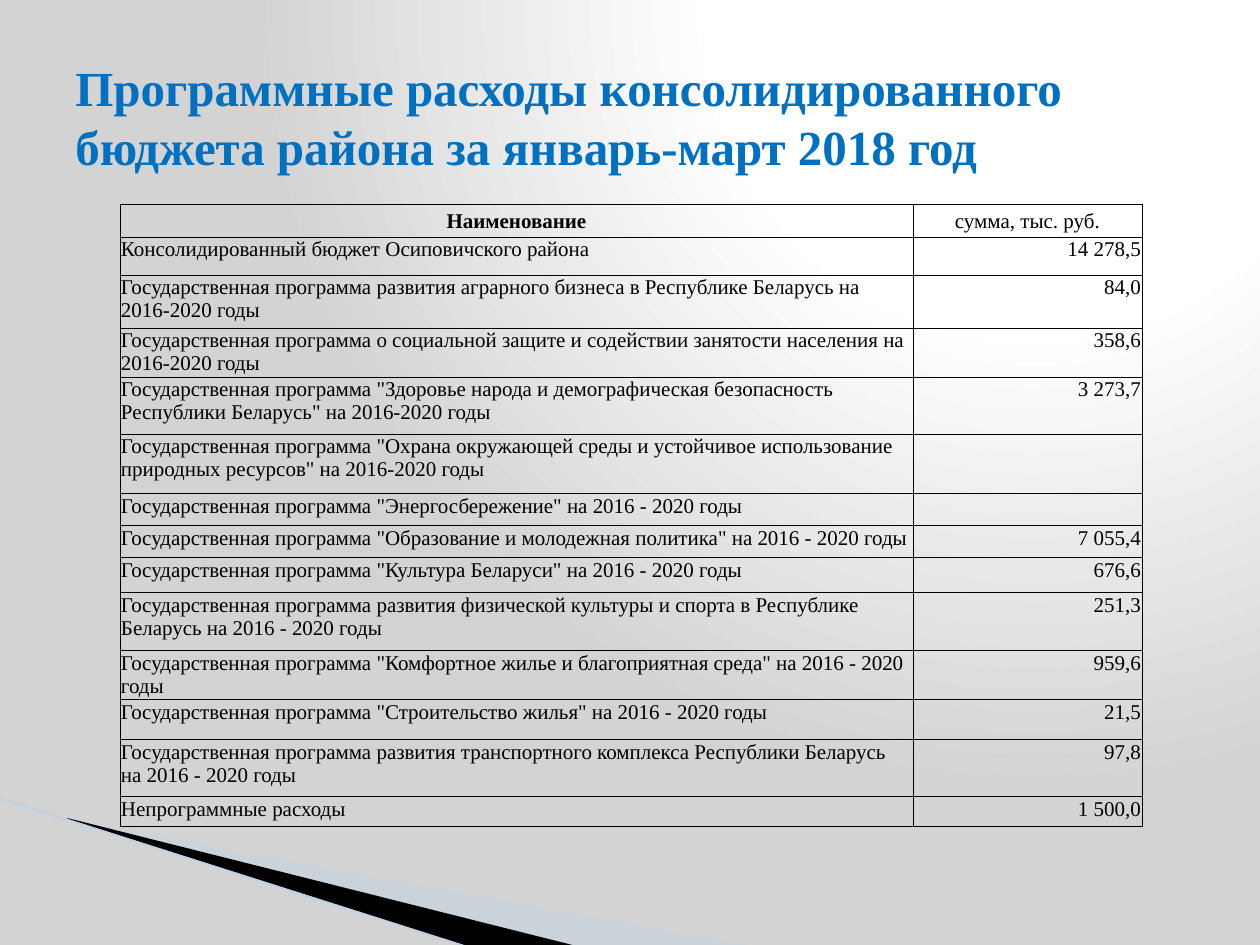
from dataclasses import dataclass

from lxml.etree import SubElement
from pptx import Presentation
from pptx.dml.color import RGBColor
from pptx.enum.shapes import MSO_CONNECTOR
from pptx.enum.text import MSO_ANCHOR, PP_ALIGN
from pptx.oxml import parse_xml
from pptx.oxml.ns import nsdecls, qn
from pptx.util import Emu, Pt


@dataclass(frozen=True)
class Theme:
    font: str = "Times New Roman"
    title_size: int = 28
    table_size: int = 12
    title: str = "0070C0"
    ink: str = "000000"
    pale: str = "C0D3E6"
    pale_alpha: int = 40
    line: str = "BBD0E3"
    line_width: float = 0.95
    border_width: float = 0.5
    backdrop: tuple = ((0, "FFFFFF"), (40, "FFFFFF"), (100, "D3D3D3"))


THEME = Theme()
SCALE = 914400 / 126

TITLE = "Программные расходы консолидированного бюджета района за январь-март 2018 год"
TITLE_BOX = (63, 38, 1134, 157)
TABLE_ORIGIN = (120, 204)
COLUMN_WIDTHS = (793, 229)
ROWS = [
    (33, "Наименование", "сумма, тыс. руб."),
    (38, "Консолидированный бюджет Осиповичского района", "14 278,5"),
    (53, "Государственная программа развития аграрного бизнеса в Республике Беларусь на 2016-2020 годы", "84,0"),
    (49, "Государственная программа о социальной защите и содействии занятости населения на 2016-2020 годы", "358,6"),
    (57, 'Государственная программа "Здоровье народа и демографическая безопасность Республики Беларусь" на 2016-2020 годы', "3 273,7"),
    (60, 'Государственная программа "Охрана окружающей среды и устойчивое использование природных ресурсов" на 2016-2020 годы', ""),
    (32, 'Государственная программа "Энергосбережение" на 2016 - 2020 годы', ""),
    (32, 'Государственная программа "Образование и молодежная политика" на 2016 - 2020 годы', "7 055,4"),
    (35, 'Государственная программа "Культура Беларуси" на 2016 - 2020 годы', "676,6"),
    (58, "Государственная программа развития физической культуры и спорта в Республике Беларусь на 2016 - 2020 годы", "251,3"),
    (49, 'Государственная программа "Комфортное жилье и благоприятная среда" на 2016 - 2020 годы', "959,6"),
    (40, 'Государственная программа "Строительство жилья" на 2016 - 2020 годы', "21,5"),
    (57, "Государственная программа развития транспортного комплекса Республики Беларусь на 2016 - 2020 годы", "97,8"),
    (30, "Непрограммные расходы", "1 500,0"),
]
PALE_WEDGE = [(69, 820), (750, 946), (575, 946), (69, 819)]
DARK_WEDGE = [(67, 818), (576, 946), (469, 947), (68, 819)]
EDGE_LINE = (-1, 798, 468, 947)


def px(length):
    return Emu(round(length * SCALE))


def style_font(para, size, color, bold=False):
    para.font.name = THEME.font
    para.font.size = Pt(size)
    para.font.bold = bold
    para.font.color.rgb = RGBColor.from_string(color)


def paint_background(page):
    fill = page.background.fill
    fill.gradient()
    stops = "".join(
        f'<a:gs pos="{place * 1000}"><a:srgbClr val="{color}"/></a:gs>'
        for place, color in THEME.backdrop
    )
    gradient = parse_xml(
        f'<a:gradFill {nsdecls("a")} rotWithShape="1"><a:gsLst>{stops}</a:gsLst>'
        '<a:path path="circle"><a:fillToRect l="65000" t="0" r="0" b="98000"/></a:path>'
        "</a:gradFill>"
    )
    current = page.background._cSld.find(".//" + qn("a:gradFill"))
    current.getparent().replace(current, gradient)


def add_wedge(page, points, color, alpha=100):
    builder = page.shapes.build_freeform(*points[0], scale=SCALE)
    builder.add_line_segments(points[1:], close=True)
    wedge = builder.convert_to_shape()
    wedge.shadow.inherit = False
    wedge.fill.solid()
    wedge.fill.fore_color.rgb = RGBColor.from_string(color)
    wedge.line.fill.background()
    if alpha < 100:
        tint = wedge._element.spPr.find(qn("a:solidFill"))[0]
        SubElement(tint, qn("a:alpha"), val=str(alpha * 1000))


def add_edge_line(page):
    edge = page.shapes.add_connector(MSO_CONNECTOR.STRAIGHT, *map(px, EDGE_LINE))
    edge.line.color.rgb = RGBColor.from_string(THEME.line)
    edge.line.width = Pt(THEME.line_width)
    SubElement(edge._element.spPr, qn("a:effectLst"))


def add_borders(cell):
    properties = cell._tc.get_or_add_tcPr()
    for index, side in enumerate(("lnL", "lnR", "lnT", "lnB")):
        border = parse_xml(
            f'<a:{side} {nsdecls("a")} w="{Pt(THEME.border_width)}">'
            f'<a:solidFill><a:srgbClr val="{THEME.ink}"/></a:solidFill></a:{side}>'
        )
        properties.insert(index, border)


def fill_cell(cell, text, align, bold, anchor):
    cell.text = text
    cell.margin_left = cell.margin_top = cell.margin_right = px(1)
    cell.margin_bottom = 0
    cell.vertical_anchor = anchor
    cell.fill.background()
    add_borders(cell)
    para = cell.text_frame.paragraphs[0]
    para.alignment = align
    style_font(para, THEME.table_size, THEME.ink, bold)
    if not text:
        SubElement(para._p, qn("a:endParaRPr"), sz=str(THEME.table_size * 100))


def add_expense_table(page):
    size = (sum(COLUMN_WIDTHS), sum(row[0] for row in ROWS))
    frame = page.shapes.add_table(
        len(ROWS), len(COLUMN_WIDTHS), *map(px, TABLE_ORIGIN + size)
    )
    table = frame.table
    table.first_row = table.horz_banding = False
    for column, width in zip(table.columns, COLUMN_WIDTHS):
        column.width = px(width)
    for index, (height, *texts) in enumerate(ROWS):
        table.rows[index].height = px(height)
        header = index == 0
        for column, text in enumerate(texts):
            body_align = PP_ALIGN.RIGHT if column else PP_ALIGN.LEFT
            fill_cell(
                table.cell(index, column),
                text,
                PP_ALIGN.CENTER if header else body_align,
                header and column == 0,
                MSO_ANCHOR.MIDDLE if header else MSO_ANCHOR.TOP,
            )


def add_title(page):
    box = page.shapes.add_textbox(*map(px, TITLE_BOX))
    frame = box.text_frame
    frame.word_wrap = True
    frame.vertical_anchor = MSO_ANCHOR.MIDDLE
    para = frame.paragraphs[0]
    para.text = TITLE
    style_font(para, THEME.title_size, THEME.title, bold=True)


def main():
    deck = Presentation()
    deck.slide_width, deck.slide_height = px(1260), px(945)
    page = deck.slides.add_slide(deck.slide_layouts[6])
    paint_background(page)
    add_wedge(page, PALE_WEDGE, THEME.pale, THEME.pale_alpha)
    add_wedge(page, DARK_WEDGE, THEME.ink)
    add_edge_line(page)
    add_expense_table(page)
    add_title(page)
    deck.save("out.pptx")


if __name__ == "__main__":
    main()
